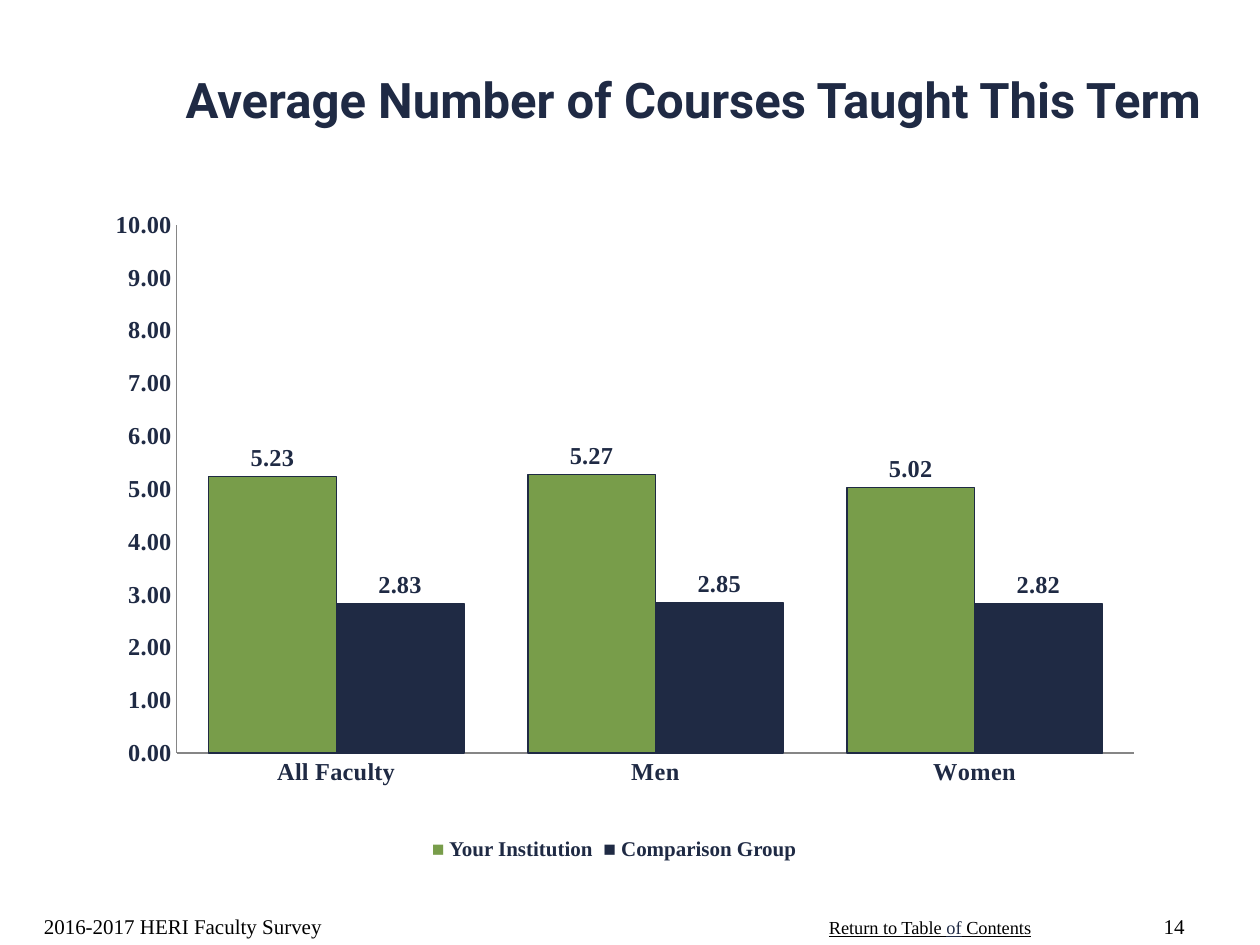
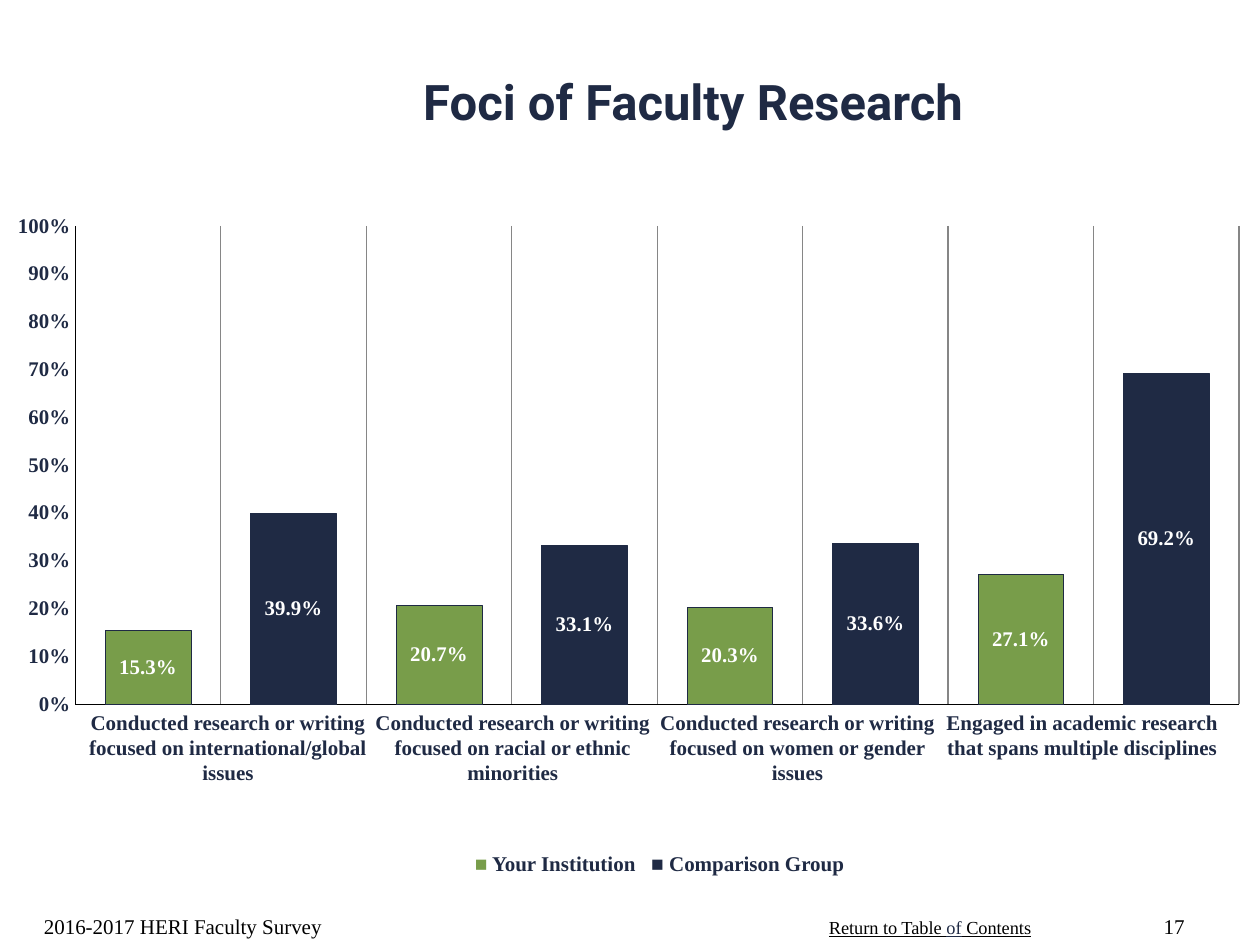
from dataclasses import dataclass
from typing import Any

from lxml import etree
from pptx import Presentation
from pptx.chart.data import CategoryChartData
from pptx.dml.color import RGBColor
from pptx.enum.chart import XL_CHART_TYPE as Kind
from pptx.enum.chart import XL_LABEL_POSITION as Spot
from pptx.enum.chart import XL_TICK_LABEL_POSITION as Ticks
from pptx.enum.chart import XL_TICK_MARK as Mark
from pptx.enum.text import MSO_ANCHOR as Anchor
from pptx.enum.text import MSO_AUTO_SIZE as Fit
from pptx.enum.text import PP_ALIGN as Align
from pptx.oxml.ns import qn
from pptx.util import Inches, Pt

NAVY = RGBColor(0x1F, 0x2A, 0x44)
GREEN = RGBColor(0x78, 0x9D, 0x4A)
GREY = RGBColor(0x86, 0x86, 0x86)
BLACK = RGBColor(0, 0, 0)
WHITE = RGBColor(255, 255, 255)
SERIF = "Times New Roman"
BOLD = {"name": SERIF, "size": Pt(12), "bold": True}
PLAIN = {"name": SERIF, "size": Pt(12)}
LINK = {"name": SERIF, "size": Pt(10.5), "underline": True}
HEAD = {"name": "Roboto", "size": Pt(28), "bold": True}


@dataclass
class Box:
    left: float
    top: float
    width: float
    height: float

    def lengths(self) -> list:
        return [Inches(n) for n in (self.left, self.top, self.width, self.height)]


@dataclass
class Run:
    text: str
    color: RGBColor = NAVY


@dataclass
class Page:
    title: str
    number: str
    top: float      # top of the title box
    inset: float    # room below the title text
    key: Box        # colour key
    tab: float      # start of the second key entry


@dataclass
class Plot:
    box: Box
    kind: Any
    cats: list[str]
    rows: list[list[float]]
    size: float
    peak: float
    step: float
    gap: int
    edge: float     # bar outline in points
    axis: str       # number format of the value axis
    value: str      # number format of the bar labels
    ink: RGBColor   # colour of the bar labels
    spot: Any
    rule: RGBColor
    thin: float     # axis line in points


def apply(target: Any, values: dict) -> None:
    for name, value in values.items():
        setattr(target, name, value)


def style(font: Any, values: dict, color: RGBColor) -> None:
    apply(font, values)
    font.color.rgb = color


def stroke(line: Any, color: RGBColor, width: float) -> None:
    line.color.rgb = color
    line.width = Pt(width)


def write(slide: Any, box: Box, runs: list[Run], font: dict,
          align: Any = Align.LEFT, **frame: Any) -> Any:
    """Add a text box with one paragraph and return that paragraph."""
    body = slide.shapes.add_textbox(*box.lengths()).text_frame
    apply(body, {"word_wrap": True, **frame})
    para = body.paragraphs[0]
    para.alignment = align
    for item in runs:
        run = para.add_run()
        run.text = item.text
        style(run.font, font, item.color)
    return para


def add_key(slide: Any, page: Page) -> None:
    para = write(slide, page.key, [Run("■", GREEN), Run(" Your Institution\t■ Comparison Group")], BOLD)
    props = para._p.get_or_add_pPr()
    tabs = etree.SubElement(props, qn("a:tabLst"))
    etree.SubElement(tabs, qn("a:tab"), pos=str(Inches(page.tab)), algn="l")


def add_page(deck: Any, page: Page) -> Any:
    """Add a slide with its title, colour key and footer."""
    slide = deck.slides.add_slide(deck.slide_layouts[5])
    title = slide.shapes.title
    apply(title, dict(zip(("left", "top", "width", "height"),
                          Box(1, page.top, 9, 1.5).lengths())))
    title.text = page.title
    apply(title.text_frame, {"auto_size": Fit.NONE, "word_wrap": True,
                             "vertical_anchor": Anchor.MIDDLE,
                             "margin_bottom": Inches(page.inset)})
    para = title.text_frame.paragraphs[0]
    para.alignment = Align.CENTER
    style(para.runs[0].font, HEAD, NAVY)

    add_key(slide, page)
    low = {"vertical_anchor": Anchor.BOTTOM}
    write(slide, Box(0.25, 7, 3.17, 0.5),
          [Run("2016-2017 HERI Faculty Survey", BLACK)], PLAIN, **low)
    write(slide, Box(6.48, 7.22, 1.82, 0.28),
          [Run("Return to Table ", BLACK), Run("of"), Run(" Contents", BLACK)],
          LINK, word_wrap=False)
    write(slide, Box(9, 7, 0.5, 0.5), [Run(page.number, BLACK)], PLAIN,
          Align.RIGHT, **low)
    return slide


def paint(bar: Any, color: RGBColor, edge: float) -> None:
    bar.format.fill.solid()
    bar.format.fill.fore_color.rgb = color
    stroke(bar.format.line, NAVY, edge)


def add_plot(slide: Any, plot: Plot) -> Any:
    data = CategoryChartData()
    data.categories = plot.cats
    for num, row in enumerate(plot.rows, 1):
        data.add_series(f"Series {num}", row)
    chart = slide.shapes.add_chart(plot.kind, *plot.box.lengths(), data).chart
    apply(chart, {"has_legend": False, "has_title": False})
    style(chart.font, {**BOLD, "size": Pt(plot.size)}, NAVY)

    apply(chart.value_axis, {"minimum_scale": 0, "maximum_scale": plot.peak,
                             "major_unit": plot.step, "has_major_gridlines": False})
    apply(chart.value_axis.tick_labels, {"number_format": plot.axis,
                                         "number_format_is_linked": False})
    for axis in (chart.value_axis, chart.category_axis):
        apply(axis, {"major_tick_mark": Mark.NONE, "minor_tick_mark": Mark.NONE})
        stroke(axis.format.line, plot.rule, plot.thin)

    bars = chart.plots[0]
    apply(bars, {"gap_width": plot.gap, "vary_by_categories": False})
    for row, color in zip(bars.series, (GREEN, NAVY)):
        row.invert_if_negative = False
        paint(row, color, plot.edge)
        tags = row.data_labels
        apply(tags, {"show_value": True, "number_format": plot.value,
                     "number_format_is_linked": False, "position": plot.spot})
        style(tags.font, {**BOLD, "size": Pt(plot.size)}, plot.ink)
    return chart


def place(chart: Any, x: float, y: float, w: float, h: float) -> None:
    """Fix the inner plot area as fractions of the chart."""
    area = chart._chartSpace.find(".//" + qn("c:plotArea"))
    old = area.find(qn("c:layout"))
    if old is not None:
        area.remove(old)
    layout = etree.Element(qn("c:layout"))
    area.insert(0, layout)
    manual = etree.SubElement(layout, qn("c:manualLayout"))
    parts = {"layoutTarget": "inner", "xMode": "edge", "yMode": "edge",
             "x": x, "y": y, "w": w, "h": h}
    for name, value in parts.items():
        etree.SubElement(manual, qn(f"c:{name}"), val=str(value))


def courses(deck: Any) -> None:
    slide = add_page(deck, Page("Average Number of Courses Taught This Term", "14",
                                0.25, 0.48, Box(3.33, 6.58, 3.33, 0.3), 1.36))
    add_plot(slide, Plot(
        Box(0.75, 1.58, 8.42, 4.75), Kind.COLUMN_CLUSTERED,
        ["All Faculty", "Men", "Women"], [[5.23, 5.27, 5.02], [2.83, 2.85, 2.82]],
        size=13.9, peak=10, step=1, gap=50, edge=0.75, axis="0.00", value="0.00",
        ink=NAVY, spot=Spot.OUTSIDE_END, rule=GREY, thin=0.75))


def foci(deck: Any) -> None:
    slide = add_page(deck, Page("Foci of Faculty Research", "17",
                                0.17, 0.29, Box(3.67, 6.7, 3.42, 0.3), 1.4))
    shares = [0.153, 0.399, 0.207, 0.331, 0.203, 0.336, 0.271, 0.692]
    chart = add_plot(slide, Plot(
        Box(0.06, 1.67, 9.78, 4.08), Kind.COLUMN_STACKED,
        [str(n) for n in range(1, 9)], [shares],
        size=11.9, peak=1, step=0.1, gap=70, edge=0.25, axis="0%", value="0.0%",
        ink=WHITE, spot=Spot.CENTER, rule=BLACK, thin=0.19))
    place(chart, 0.055, 0.03, 0.945, 0.93)
    axis = chart.category_axis
    apply(axis, {"tick_label_position": Ticks.NONE, "has_major_gridlines": True})
    stroke(axis.major_gridlines.format.line, GREY, 0.75)
    bars = chart.plots[0]
    bars.overlap = 100
    for num in range(1, len(shares), 2):
        paint(bars.series[0].points[num], NAVY, 0.25)

    topics = [
        "Conducted research or writing focused on international/global issues",
        "Conducted research or writing focused on racial or ethnic minorities",
        "Conducted research or writing focused on women or gender issues",
        "Engaged in academic research that spans multiple disciplines",
    ]
    wide = 2.26
    for num, topic in enumerate(topics):
        write(slide, Box(0.68 + num * wide, 5.58, wide, 0.91), [Run(topic)], BOLD,
              Align.CENTER, margin_left=0, margin_right=0)


def main() -> None:
    deck = Presentation()
    apply(deck, {"slide_width": Inches(10), "slide_height": Inches(7.5)})
    courses(deck)
    foci(deck)
    deck.save("out.pptx")


if __name__ == "__main__":
    main()
